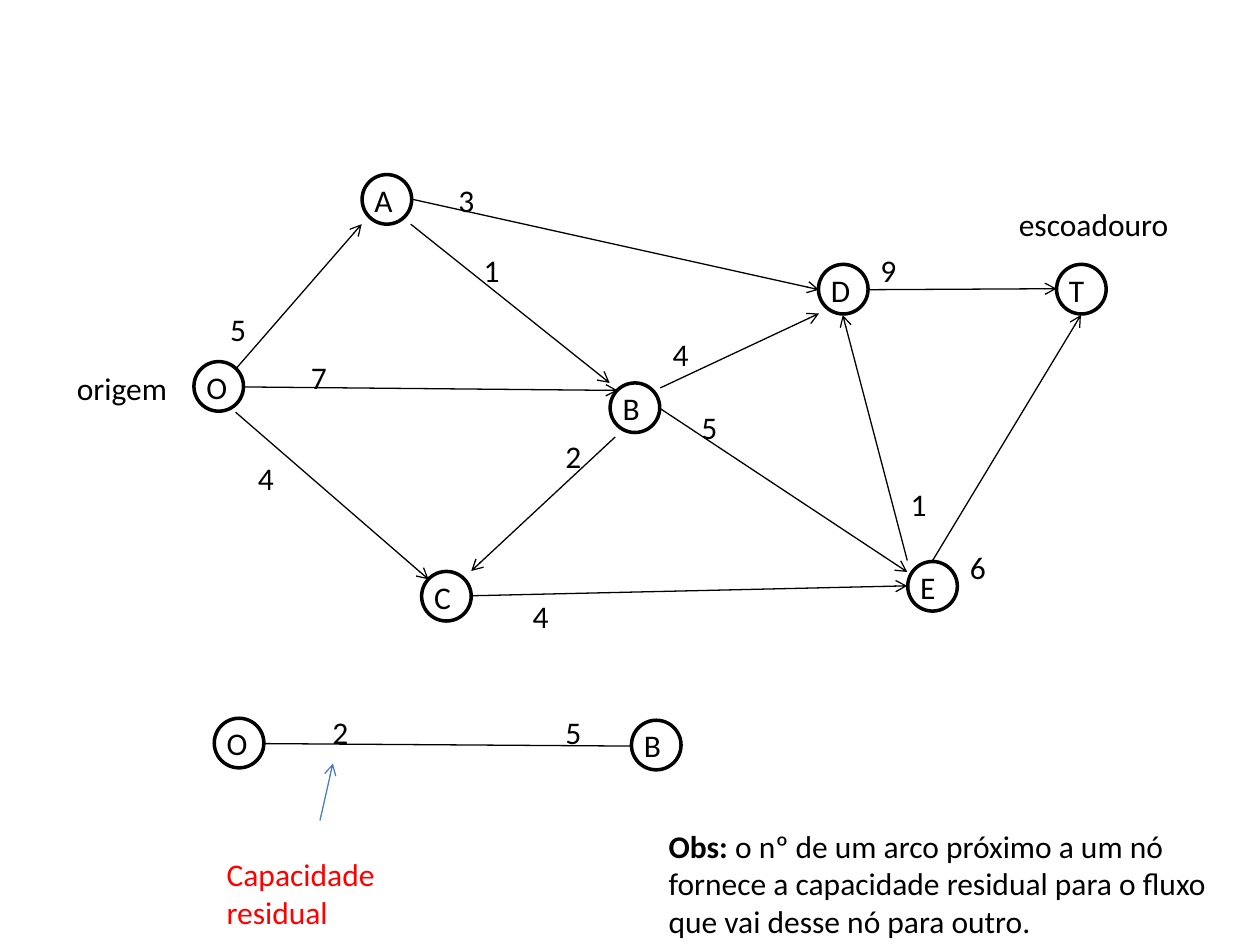
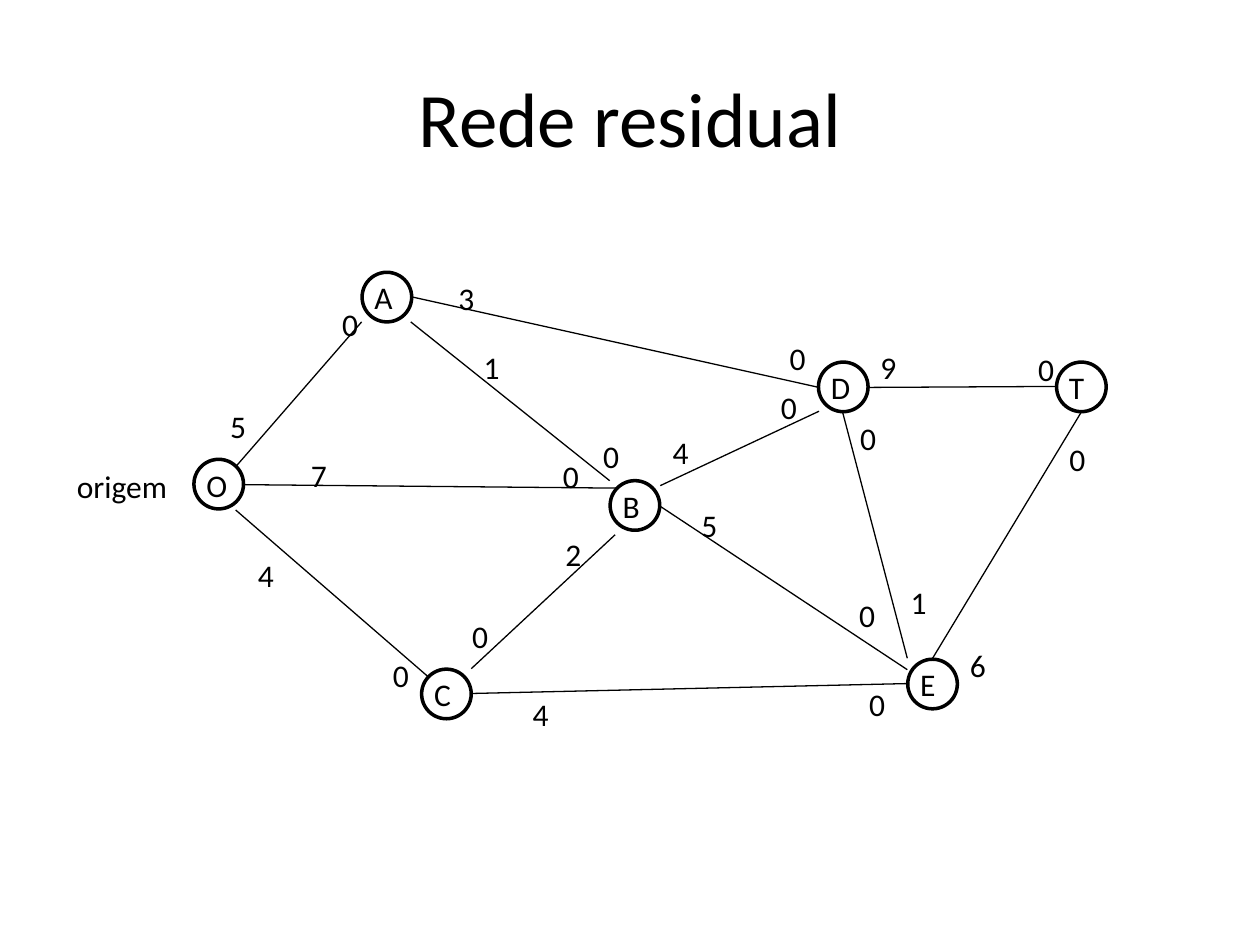
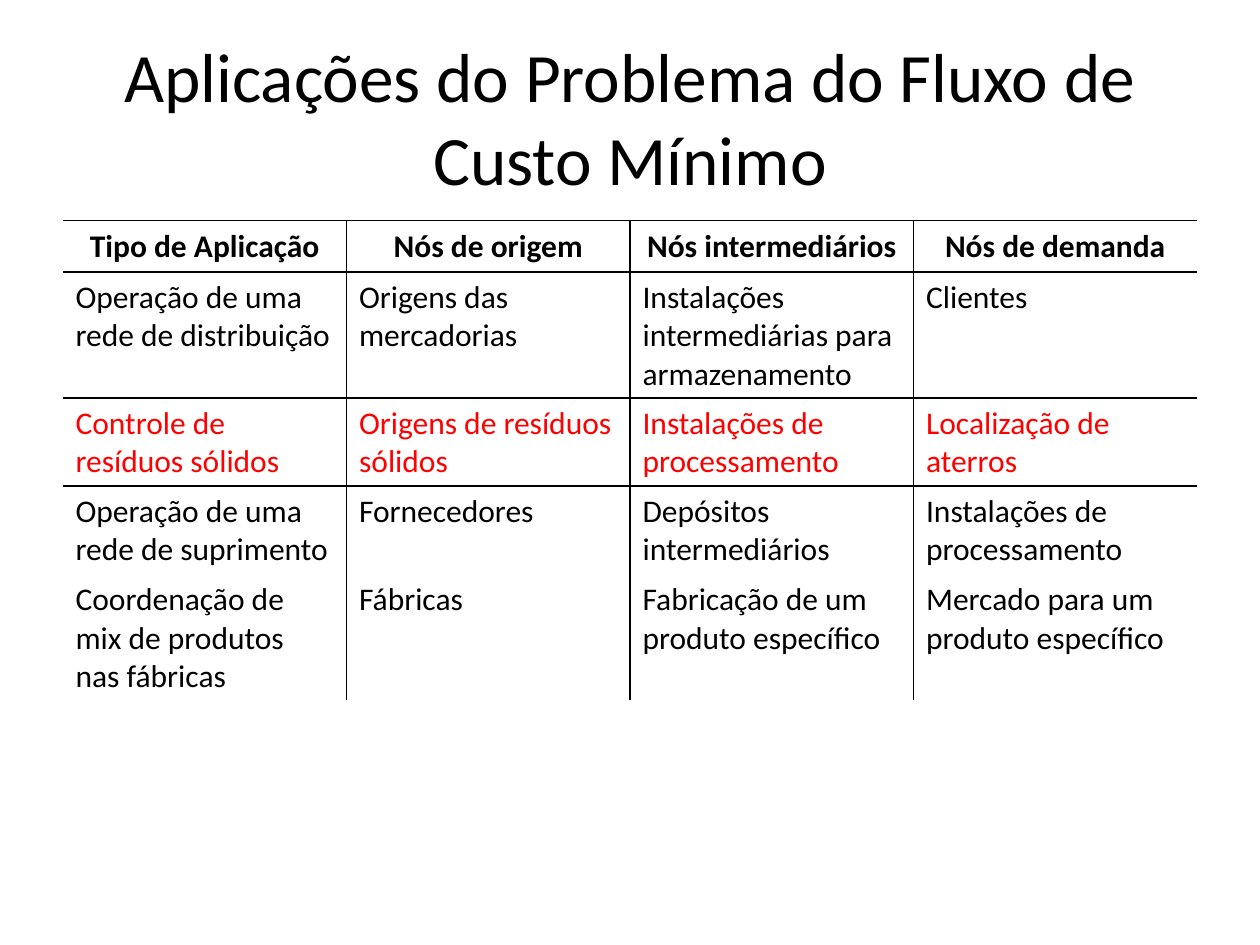
from lxml import etree
from pptx import Presentation
from pptx import util as u
from pptx.dml.color import RGBColor
from pptx.enum import shapes, text
from pptx.oxml.ns import qn

BLACK, RED, BLUE = "000000", "FF0000", "4B7EBC"
FONT = "Calibri"
DISC, HIGH = 1, 1.03
SHIFT = 1.97
PLAIN = "{2D5ABB26-0587-4C30-8999-92F81FD0307C}"

NODES = [
    ("O", 3.91, 7.29), ("B", 12.3, 7.72), ("E", 18.3, 11.32),
    ("C", 8.5, 11.52), ("D", 16.5, 5.33), ("T", 21.3, 5.33),
    ("A", 7.3, 3.52),
]
ARCS = [
    (4.75, 7.44, 7.29, 4.52), (13.3, 8.23, 18.29, 11.53),
    (17.5, 5.84, 21.3, 5.82), (9.5, 12.01, 18.29, 11.81),
    (4.9, 7.8, 12.45, 7.87), (8.28, 4.01, 16.51, 5.84),
    (4.75, 8.31, 8.64, 11.68), (8.28, 4.52, 12.29, 7.72),
    (18.29, 11.3, 16.99, 6.35), (18.8, 11.3, 21.79, 6.35),
    (12.4, 8.81, 9.5, 11.51), (13.31, 7.82, 16.51, 6.32),
]
COSTS = [
    ("5", 4.39, 6.12), ("7", 6.02, 7.09), ("4", 4.95, 9.12),
    ("3", 8.99, 3.53), ("1", 9.5, 4.93), ("2", 11.15, 8.69),
    ("4", 10.49, 11.91), ("6", 19.3, 10.92), ("1", 18.11, 9.65),
    ("9", 17.5, 4.93), ("5", 13.89, 8.1), ("4", 13.31, 6.63),
]
ZEROS = [
    (6.65, 6.02), (15.67, 6.71), (20.68, 6.93), (15.49, 7.7),
    (17.07, 11.89), (11.91, 8.69), (11.1, 9.09), (7.67, 13.11),
    (9.27, 12.32), (17.27, 13.69), (21.31, 8.74), (17.09, 8.33),
]
ROWS = [
    ("Tipo de Aplicação", "Nós de origem", "Nós intermediários",
     "Nós de demanda"),
    ("Operação de uma rede de distribuição", "Origens das mercadorias",
     "Instalações intermediárias para armazenamento", "Clientes"),
    ("Controle de resíduos sólidos", "Origens de resíduos sólidos",
     "Instalações de processamento", "Localização de aterros"),
    ("Operação de uma rede de suprimento", "Fornecedores",
     "Depósitos intermediários", "Instalações de processamento"),
    ("Coordenação de mix de produtos nas fábricas", "Fábricas",
     "Fabricação de um produto específico",
     "Mercado para um produto específico"),
]


def cms(*nums):
    return [u.Cm(n) for n in nums]


def tint(code):
    return RGBColor.from_string(code)


def write(frame, words, size=18, color=BLACK, bold=False, lead="",
          align=text.PP_ALIGN.LEFT):
    para = frame.paragraphs[0]
    para.alignment = align
    for part, thick in ((lead, True), (words, bold)):
        if part:
            run = para.add_run()
            run.text = part
            font = run.font
            font.name, font.size, font.bold = FONT, u.Pt(size), thick
            font.color.rgb = tint(color)


def label(slide, words, left, top, width=DISC, height=HIGH, **style):
    frame = slide.shapes.add_textbox(*cms(left, top, width, height)).text_frame
    frame.word_wrap = True
    frame.auto_size = text.MSO_AUTO_SIZE.SHAPE_TO_FIT_TEXT
    write(frame, words, **style)


def title(slide, words, size=44):
    frame = slide.shapes.add_textbox(*cms(1.27, 0.76, 22.86, 3.18)).text_frame
    frame.word_wrap = True
    frame.vertical_anchor = text.MSO_ANCHOR.MIDDLE
    write(frame, words, size=size, align=text.PP_ALIGN.CENTER)


def node(slide, name, left, top):
    disc = slide.shapes.add_shape(
        shapes.MSO_SHAPE.OVAL, *cms(left, top, DISC, DISC))
    disc.shadow.inherit = False
    disc.fill.background()
    disc.line.color.rgb = tint(BLACK)
    disc.line.width = u.Pt(2)
    label(slide, name, left, top)


def link(slide, ends, arrow=False, color=BLACK):
    wire = slide.shapes.add_connector(
        shapes.MSO_CONNECTOR.STRAIGHT, *cms(*ends))
    wire.line.color.rgb = tint(color)
    wire.line.width = u.Pt(0.75)
    if arrow:
        etree.SubElement(wire.line._get_or_add_ln(), qn("a:tailEnd"),
                         type="arrow")
    etree.SubElement(wire._element.spPr, qn("a:effectLst"))


def graph(slide, drop=0, arrow=False):
    for name, left, top in NODES:
        node(slide, name, left, top + drop)
    for x1, y1, x2, y2 in ARCS:
        link(slide, (x1, y1 + drop, x2, y2 + drop), arrow)
    for cost, left, top in COSTS:
        label(slide, cost, left, top + drop)
    label(slide, "origem", 1.3, 7.32 + drop, 2.79)


def edge(cell, sides):
    props = cell._tc.get_or_add_tcPr()
    for side in sides:
        line = etree.SubElement(props, qn("a:ln" + side), w=str(u.Pt(1)))
        fill = etree.SubElement(line, qn("a:solidFill"))
        etree.SubElement(fill, qn("a:srgbClr"), val=BLACK)


def sides(row, col):
    found = []
    if col > 0:
        found.append("L")
    if col < len(ROWS[0]) - 1:
        found.append("R")
    if row < 3:
        found.append("T")
    if row < 2:
        found.append("B")
    return found


def grid(slide):
    table = slide.shapes.add_table(
        len(ROWS), len(ROWS[0]),
        *cms(1.27, 4.45, 22.86, len(ROWS) * HIGH)).table
    table.first_row = table.horz_banding = False
    table._tbl.tblPr.find(qn("a:tableStyleId")).text = PLAIN
    for r, row in enumerate(ROWS):
        head = r == 0
        for c, words in enumerate(row):
            cell = table.cell(r, c)
            edge(cell, sides(r, c))
            cell.fill.background()
            write(cell.text_frame, words, bold=head,
                  color=RED if r == 2 else BLACK,
                  align=text.PP_ALIGN.CENTER if head else text.PP_ALIGN.LEFT)


def flow(slide):
    graph(slide, arrow=True)
    label(slide, "escoadouro", 20.29, 4.01, 4.8)
    node(slide, "O", 4.32, 14.48)
    node(slide, "B", 12.73, 14.52)
    link(slide, (5.33, 14.99, 12.73, 15.04))
    label(slide, "2", 6.45, 14.25)
    label(slide, "5", 11.15, 14.25)
    link(slide, (6.45, 16.54, 6.71, 15.39), arrow=True, color=BLUE)
    label(slide, "Capacidade residual", 4.32, 17.12, 3.96, 1.8, color=RED)
    label(slide, "o nº de um arco próximo a um nó fornece a capacidade "
          "residual para o fluxo que vai desse nó para outro.",
          13.23, 16.54, 12.17, 2.57, lead="Obs: ")


def rest(slide):
    title(slide, "Rede residual")
    graph(slide, SHIFT)
    for left, top in ZEROS:
        label(slide, "0", left, top)


def uses(slide):
    title(slide, "Aplicações do Problema do Fluxo de Custo Mínimo", 39.6)
    grid(slide)


def main():
    deck = Presentation()
    deck.slide_width, deck.slide_height = cms(25.4, 19.05)
    for build in (flow, rest, uses):
        build(deck.slides.add_slide(deck.slide_layouts[6]))
    deck.save("out.pptx")


if __name__ == "__main__":
    main()
